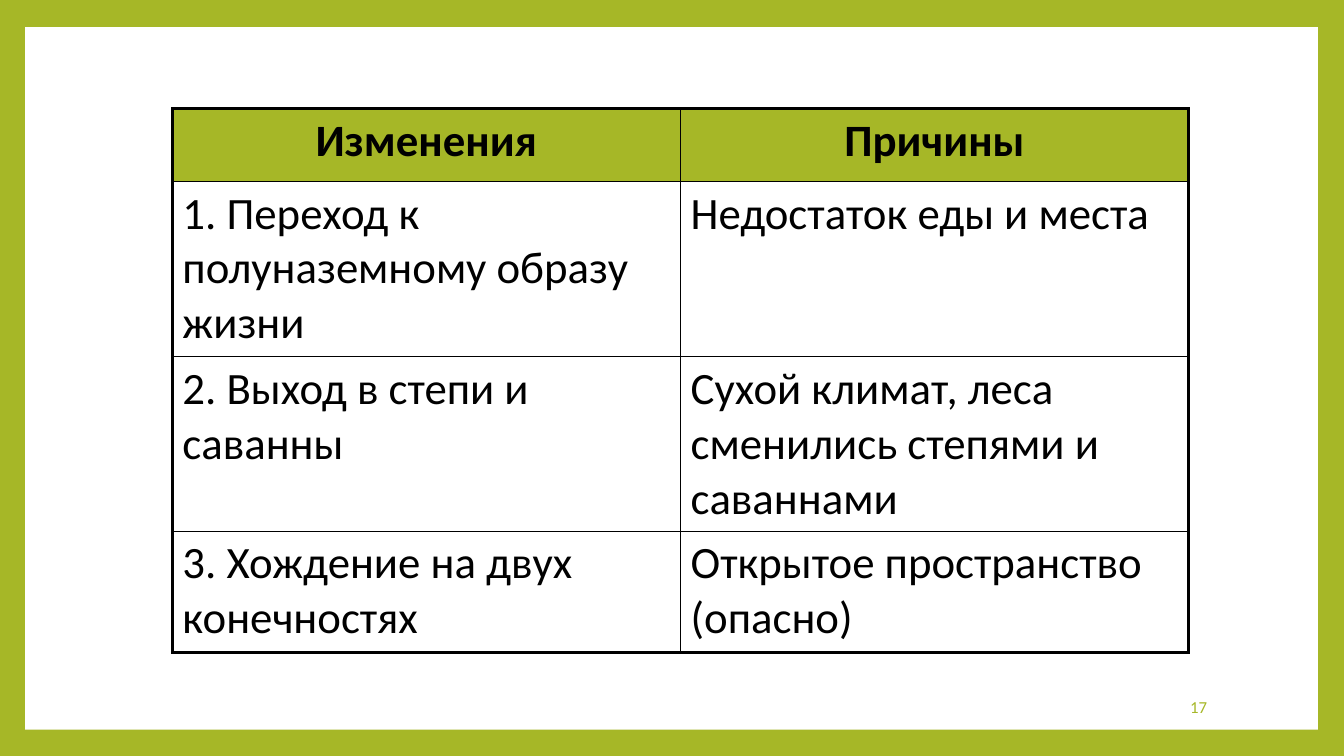
from dataclasses import dataclass

from lxml.etree import SubElement
from pptx import Presentation
from pptx.dml.color import RGBColor
from pptx.enum.shapes import MSO_SHAPE as Shape
from pptx.enum.text import MSO_ANCHOR as Anchor, PP_ALIGN as Align
from pptx.oxml.ns import qn
from pptx.slide import Slide
from pptx.table import Table, _Cell as Cell
from pptx.text.text import _Paragraph as Paragraph
from pptx.util import Inches, Pt

GREEN = RGBColor(0xA6, 0xB7, 0x27)
WHITE = RGBColor(0xFF, 0xFF, 0xFF)
BLACK = RGBColor(0x00, 0x00, 0x00)
FONT = "Calibri"
OUTER, INNER = 2.25, 1.0  # border widths in points
COLUMN_WIDTH = 5.04


@dataclass(frozen=True)
class Area:
    left: float
    top: float
    width: float
    height: float

    def lengths(self) -> list[Inches]:
        return [Inches(n) for n in (self.left, self.top, self.width, self.height)]


@dataclass(frozen=True)
class TableRow:
    change: str
    reason: str
    height: float
    header: bool = False


ROWS = [
    TableRow("Изменения", "Причины", 0.72, header=True),
    TableRow("1. Переход к полуназемному образу жизни", "Недостаток еды и места", 1.74),
    TableRow("2. Выход в степи и саванны",
             "Сухой климат, леса сменились степями и саваннами", 1.73),
    TableRow("3. Хождение на двух конечностях", "Открытое пространство (опасно)", 1.2),
]
PANEL = Area(0.25, 0.27, 12.82, 6.97)
TABLE = Area(1.71, 1.08, 2 * COLUMN_WIDTH, sum(row.height for row in ROWS))
PAGE_NUMBER = Area(10.2, 6.81, 1.87, 0.4)


def add_span(para: Paragraph, text: str, size: float, color: RGBColor,
             bold: bool = False) -> None:
    span = para.add_run()
    span.text = text
    span.font.name = FONT
    span.font.size = Pt(size)
    span.font.bold = bold
    span.font.color.rgb = color


def set_borders(cell: Cell, widths: dict[str, float]) -> None:
    properties = cell._tc.get_or_add_tcPr()
    for position, (side, width) in enumerate(widths.items()):
        line = properties.makeelement(qn(f"a:ln{side}"), {"w": str(Pt(width))})
        fill = SubElement(line, qn("a:solidFill"))
        SubElement(fill, qn("a:srgbClr"), val=str(BLACK))
        properties.insert(position, line)


def fill_table(table: Table) -> None:
    last = len(ROWS) - 1
    for column in table.columns:
        column.width = Inches(COLUMN_WIDTH)
    for r, row in enumerate(ROWS):
        table.rows[r].height = Inches(row.height)
        for c, text in enumerate((row.change, row.reason)):
            cell = table.cell(r, c)
            cell.fill.solid()
            cell.fill.fore_color.rgb = GREEN if row.header else WHITE
            para = cell.text_frame.paragraphs[0]
            para.alignment = Align.CENTER if row.header else Align.LEFT
            add_span(para, text, 32, BLACK, row.header)
            set_borders(cell, {
                "L": OUTER if c == 0 else INNER,
                "R": OUTER if c == 1 else INNER,
                "T": OUTER if r == 0 else INNER,
                "B": OUTER if r == last else INNER,
            })


def add_panel(page: Slide) -> None:
    panel = page.shapes.add_shape(Shape.RECTANGLE, *PANEL.lengths())
    panel.shadow.inherit = False
    panel.fill.solid()
    panel.fill.fore_color.rgb = WHITE
    panel.line.fill.background()


def add_page_number(page: Slide) -> None:
    box = page.shapes.add_textbox(*PAGE_NUMBER.lengths())
    box.text_frame.word_wrap = True
    box.text_frame.vertical_anchor = Anchor.MIDDLE
    para = box.text_frame.paragraphs[0]
    para.alignment = Align.RIGHT
    add_span(para, "17", 12, GREEN)


def main() -> None:
    deck = Presentation()
    deck.slide_width, deck.slide_height = Inches(13.33), Inches(7.5)
    page = deck.slides.add_slide(deck.slide_layouts.get_by_name("Blank"))

    # Green frame around a white panel
    page.background.fill.solid()
    page.background.fill.fore_color.rgb = GREEN
    add_panel(page)

    # Table of changes and reasons
    fill_table(page.shapes.add_table(len(ROWS), 2, *TABLE.lengths()).table)

    add_page_number(page)
    deck.save("out.pptx")


if __name__ == "__main__":
    main()
